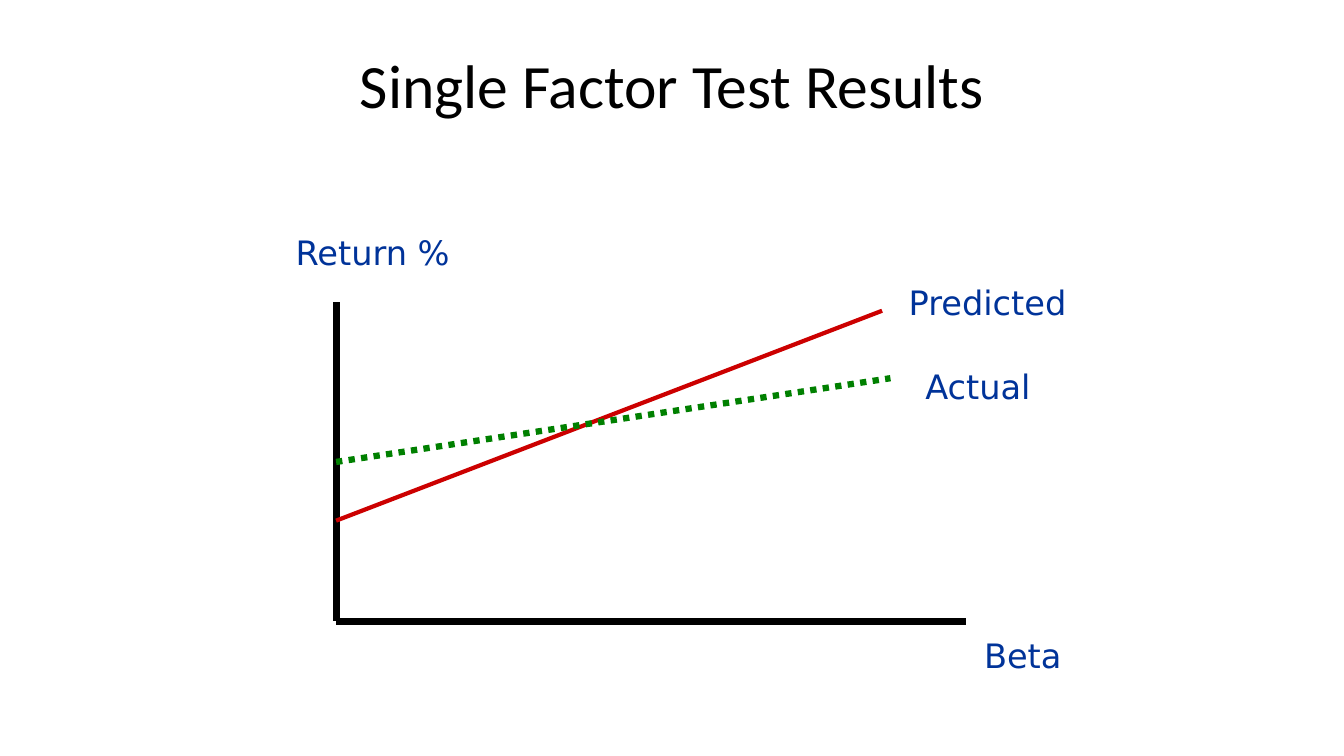
"""Build the slide that sets predicted against actual single factor returns."""
from lxml import etree
from pptx import Presentation
from pptx.dml.color import RGBColor
from pptx.enum import dml, shapes, text
from pptx.oxml import ns
from pptx.util import Cm, Pt

HUES = {"ink": "000000", "label": "003399", "model": "CC0000", "real": "008000"}


def style(par, font, size, hue):
    par.font.name = font
    par.font.size = Pt(size)
    par.font.color.rgb = RGBColor.from_string(HUES[hue])


deck = Presentation()
deck.slide_width, deck.slide_height = Cm(33.87), Cm(19.05)
slide = deck.slides.add_slide(deck.slide_layouts[5])

title = slide.shapes.title
title.left, title.top, title.width, title.height = Cm(5.5), Cm(0.64), Cm(22.88), Cm(3.18)
title.text_frame.text = "Single Factor Test Results"
title.text_frame.vertical_anchor = text.MSO_ANCHOR.MIDDLE
head = title.text_frame.paragraphs[0]
head.alignment = text.PP_ALIGN.CENTER
head.line_spacing = 0.9
style(head, "Calibri", 44, "ink")

left, base = 8.47, 15.66
lines = [
    (left, 7.62, left, base, "ink", 5, None),
    (left, base, 24.34, base, "ink", 5, None),
    (left, 13.12, 22.23, 7.83, "model", 3, None),
    (left, 11.64, 22.44, 9.53, "real", 4.5, dml.MSO_LINE.ROUND_DOT),
]
for x1, y1, x2, y2, hue, width, dash in lines:
    line = slide.shapes.add_connector(
        shapes.MSO_CONNECTOR.STRAIGHT, Cm(x1), Cm(y1), Cm(x2), Cm(y2))
    line.line.color.rgb = RGBColor.from_string(HUES[hue])
    line.line.width = Pt(width)
    if dash:
        line.line.dash_style = dash
    etree.SubElement(line._element.spPr, ns.qn("a:effectLst"))

labels = [
    ("Return %", 7.2, 5.72, 5.29),
    ("Beta", 24.55, 15.88, 3.18),
    ("Predicted", 22.65, 6.99, 4.66),
    ("Actual", 23.07, 9.1, 3.81),
]
for word, x, y, width in labels:
    box = slide.shapes.add_textbox(Cm(x), Cm(y), Cm(width), Cm(1.27))
    box.text_frame.word_wrap = True
    box.text_frame.text = word
    style(box.text_frame.paragraphs[0], "DejaVu Sans", 24, "label")

deck.save("out.pptx")
